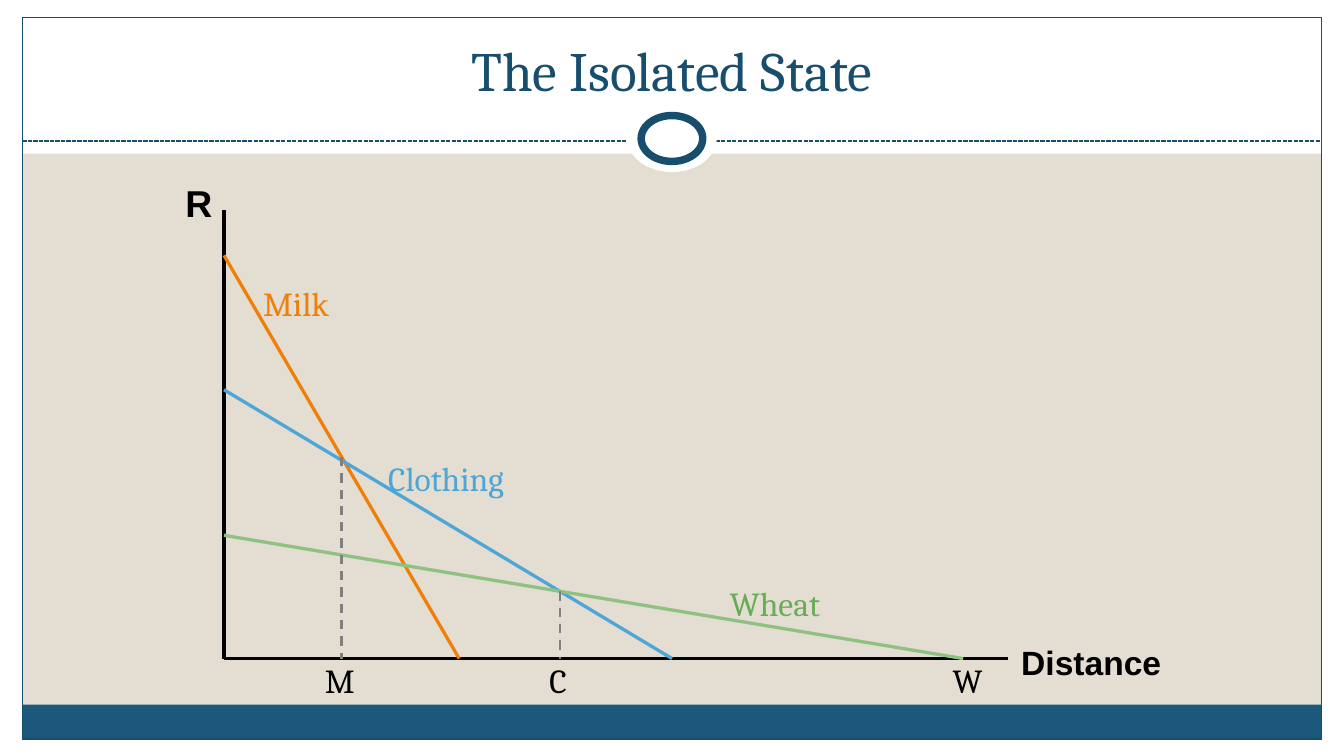
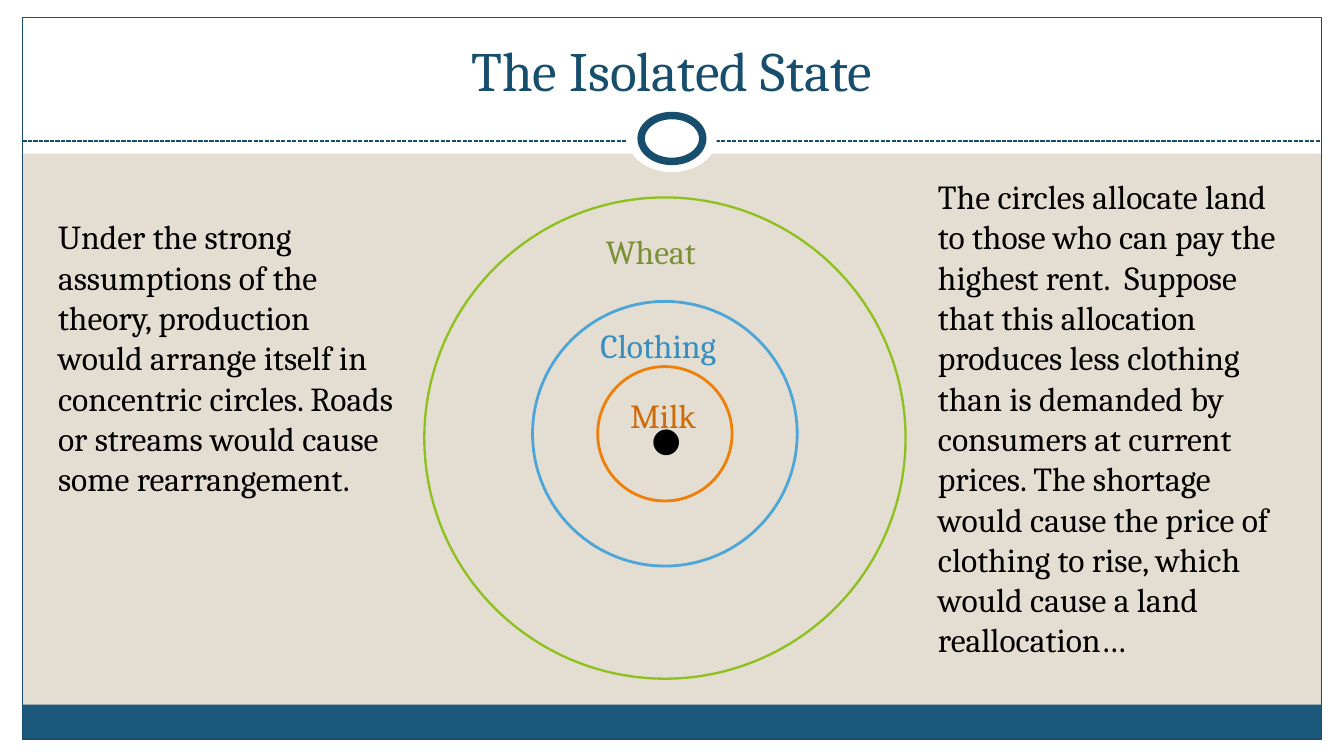
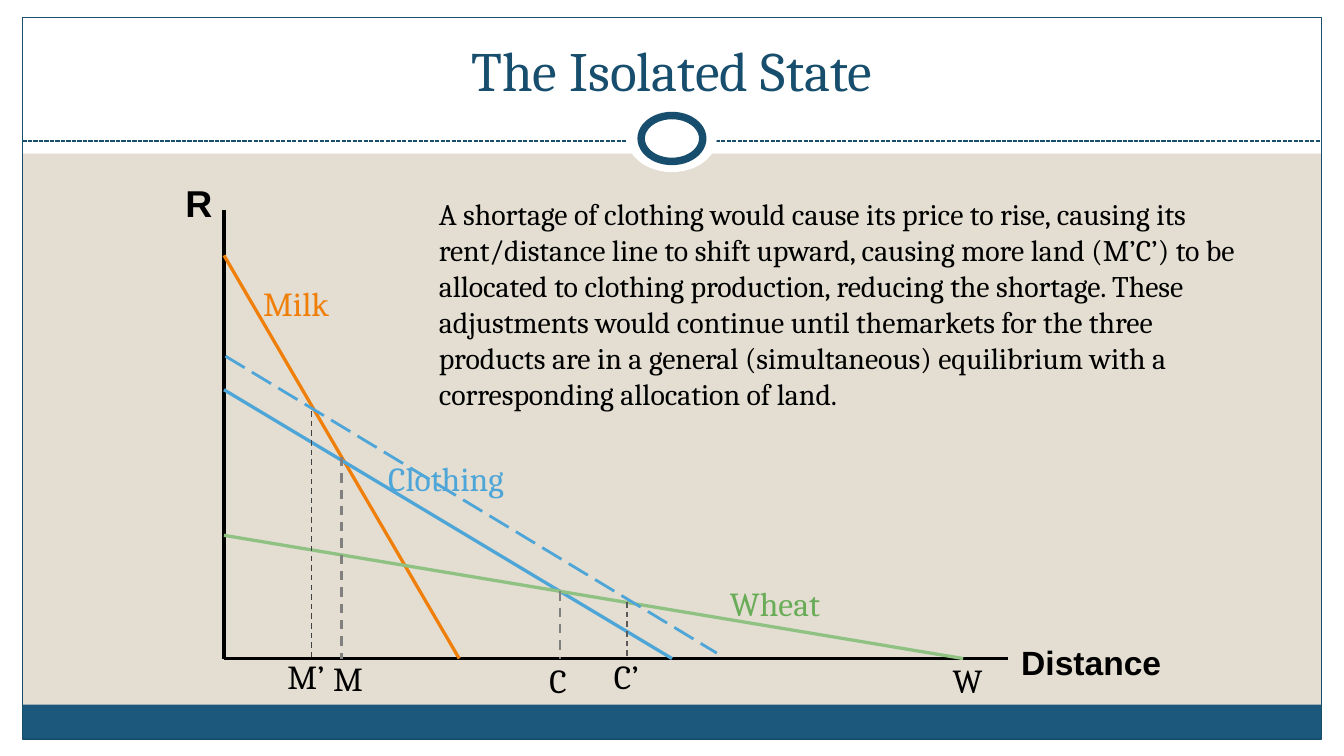
from pptx import Presentation
from pptx.dml.color import RGBColor
from pptx.enum.dml import MSO_LINE
from pptx.enum.shapes import MSO_CONNECTOR, MSO_SHAPE
from pptx.enum.text import MSO_ANCHOR, MSO_AUTO_SIZE, PP_ALIGN
from pptx.oxml.ns import qn
from pptx.util import Pt
from lxml.etree import SubElement

WIDTH, HEIGHT = 720, 405
WHITE, BLACK, SAND = "FFFFFF", "000000", "E3DED1"
NAVY, FOOTER_BLUE, GRAY = "184E6D", "1B587C", "808080"
ORANGE, BLUE, GREEN = "F07F09", "4EA5D8", "8EC182"
TITLE = "The Isolated State"
ARRANGEMENT = (
    "Under the strong assumptions of the theory, production would arrange itself in "
    "concentric circles. Roads or streams would cause some rearrangement."
)
ALLOCATION = (
    "The circles allocate land to those who can pay the highest rent.  Suppose that this "
    "allocation produces less clothing than is demanded by consumers at current prices. The "
    "shortage would cause the price of clothing to rise, which would cause a land reallocation…"
)
SHORTAGE = (
    "A shortage of clothing would cause its price to rise, causing its rent/distance line to "
    "shift upward, causing more land (M’C’) to be allocated to clothing production, reducing "
    "the shortage. These adjustments would continue until themarkets for the three products "
    "are in a general (simultaneous) equilibrium with a corresponding allocation of land."
)


def color(hex_code):
    """Turn a hex string into a colour."""
    return RGBColor.from_string(hex_code)


def add_text(slide, text, left, top, width, height=28.8, size=18, font="Cambria", fill=BLACK,
             bold=False, wrap=False, grow=True, align=PP_ALIGN.LEFT, anchor=MSO_ANCHOR.TOP):
    """Add a text box holding one formatted paragraph."""
    box = slide.shapes.add_textbox(Pt(left), Pt(top), Pt(width), Pt(height))
    frame = box.text_frame
    frame.word_wrap = wrap
    frame.auto_size = MSO_AUTO_SIZE.SHAPE_TO_FIT_TEXT if grow else MSO_AUTO_SIZE.NONE
    frame.vertical_anchor = anchor
    paragraph = frame.paragraphs[0]
    paragraph.alignment = align
    run = paragraph.add_run()
    run.text = text
    run.font.size = Pt(size)
    run.font.name = font
    run.font.bold = bold
    run.font.color.rgb = color(fill)


def add_preset(slide, kind, left, top, width, height, fill=None, line=None, weight=0.75):
    """Add a preset shape with optional fill and outline."""
    shape = slide.shapes.add_shape(kind, Pt(left), Pt(top), Pt(width), Pt(height))
    shape.shadow.inherit = False
    if fill:
        shape.fill.solid()
        shape.fill.fore_color.rgb = color(fill)
    else:
        shape.fill.background()
    if line:
        shape.line.color.rgb = color(line)
        shape.line.width = Pt(weight)
    else:
        shape.line.fill.background()


def add_line(slide, start, end, stroke, weight, dash=None):
    """Add a straight line between two points."""
    points = [Pt(value) for value in (*start, *end)]
    connector = slide.shapes.add_connector(MSO_CONNECTOR.STRAIGHT, *points)
    connector.line.color.rgb = color(stroke)
    connector.line.width = Pt(weight)
    if dash:
        connector.line.dash_style = dash
    SubElement(connector._element.spPr, qn("a:effectLst"))


def add_ring(slide, center_x, center_y, width, height, **style):
    """Add an ellipse around a centre."""
    add_preset(slide, MSO_SHAPE.OVAL, center_x - width / 2, center_y - height / 2,
               width, height, **style)


def add_base_slide(presentation):
    """Add a slide with the shared borders, frame, ornament and title."""
    slide = presentation.slides.add_slide(presentation.slide_layouts[6])
    slide.background.fill.solid()
    slide.background.fill.fore_color.rgb = color(SAND)
    margin, rule_y = 12, 75.6
    borders = [
        (0, 396, WIDTH, HEIGHT - 396),
        (0, 0, WIDTH, 82.3),
        (0, 0, margin, HEIGHT),
        (WIDTH - margin, 0, margin, HEIGHT),
    ]
    for border in borders:
        add_preset(slide, MSO_SHAPE.RECTANGLE, *border, fill=WHITE)
    inner = WIDTH - 2 * margin
    add_preset(slide, MSO_SHAPE.RECTANGLE, margin, 377.5, inner, 18, fill=FOOTER_BLUE)
    add_preset(slide, MSO_SHAPE.RECTANGLE, margin, 9.2, inner, 386.8, line=NAVY)
    add_line(slide, (margin, rule_y), (WIDTH - margin, rule_y), NAVY, 0.75, MSO_LINE.SQUARE_DOT)
    add_ring(slide, WIDTH / 2, 74.2, 48, 36, fill=WHITE)
    add_ring(slide, WIDTH / 2, 74.2, 33, 24.6, fill=WHITE, line=NAVY, weight=4)
    add_text(slide, TITLE, 24, 13.7, WIDTH - 48, 44.6, size=29.7, fill=NAVY, wrap=True,
             grow=False, align=PP_ALIGN.CENTER, anchor=MSO_ANCHOR.BOTTOM)
    return slide


def add_rent_chart(slide, left=120, base=352.8, m_label=(47, -2.9), shifted=False):
    """Draw rent against distance, measured from the origin of the axes."""

    def at(distance, rent):
        """Map distance and rent to a point on the slide."""
        return left + distance, base - rent

    def label(text, offset_x, offset_y, width, **style):
        """Place a label relative to the origin."""
        add_text(slide, text, left + offset_x, base + offset_y, width, **style)

    def drop(distance, rent, stroke, weight):
        """Draw a dashed line down to the distance axis."""
        add_line(slide, at(distance, rent), at(distance, 0), stroke, weight, MSO_LINE.DASH)

    add_line(slide, at(0, 240.5), at(0, 0), BLACK, 2.5)
    add_line(slide, at(0, 0), at(420, 0), BLACK, 2)
    label("Distance", 420, -12.2, 90, font="Arial", bold=True)
    label("R", -27.8, -259.9, 29.5, height=31.7, size=20, font="Arial", bold=True)
    for rent, distance, stroke in [(216, 126, ORANGE), (144, 240, BLUE), (66, 396, GREEN)]:
        add_line(slide, at(0, rent), at(distance, 0), stroke, 1.75)
    label("Milk", 13.9, -204.5, 51.8, fill=ORANGE)
    label("Clothing", 80.9, -110.9, 83.5, fill=BLUE)
    label("Wheat", 264, -43.9, 67, fill="68AC58")
    drop(63, 108, GRAY, 1.25)
    drop(180, 36, GRAY, 1.25)
    label("M", *m_label, 31.7)
    label("C", 167.3, -2.9, 25.9)
    label("W", 383.3, -2.9, 32.4)
    if shifted:
        add_line(slide, at(0.8, 162), at(264, 2.9), BLUE, 1.5, MSO_LINE.LONG_DASH)
        drop(47, 132.5, "404040", 0.75)
        label("M’", 26.9, -5, 35.3)
        drop(216, 30.2, "595959", 0.75)
        label("C’", 201.8, -5, 30.2)


def add_land_rings(slide, center_x=356.2, center_y=232.4):
    """Draw the land use rings around the town."""
    add_text(slide, "●", center_x - 14.2, center_y - 12.1, 28)
    rings = [
        (72, 0, ORANGE, 1.5),
        (141.8, 0, BLUE, 1.5),
        (257.8, 2.3, "8EC11E", 1.25),
    ]
    for diameter, shift, stroke, weight in rings:
        add_ring(slide, center_x, center_y + shift, diameter, diameter,
                 line=stroke, weight=weight)
    labels = [
        ("Milk", -25.7, -24.3, 51.8, "CE6B08"),
        ("Clothing", -41.6, -61.8, 83.5, "388EBE"),
        ("Wheat", -38.7, -112.2, 67, "7B9038"),
    ]
    for text, offset_x, offset_y, width, fill in labels:
        add_text(slide, text, center_x + offset_x, center_y + offset_y, width, fill=fill)


def main():
    """Build the three slides and save them."""
    presentation = Presentation()
    presentation.slide_width, presentation.slide_height = Pt(WIDTH), Pt(HEIGHT)

    add_rent_chart(add_base_slide(presentation))

    rings_slide = add_base_slide(presentation)
    add_land_rings(rings_slide)
    add_text(rings_slide, ARRANGEMENT, 24, 112.3, 198, 225.4, wrap=True)
    add_text(rings_slide, ALLOCATION, 495.4, 90.7, 198, 290.9, wrap=True)

    shift_slide = add_base_slide(presentation)
    add_rent_chart(shift_slide, m_label=(51.4, -3.6), shifted=True)
    add_text(shift_slide, SHORTAGE, 228, 101.5, 456, 123.8, size=16, wrap=True)

    presentation.save("out.pptx")


if __name__ == "__main__":
    main()
